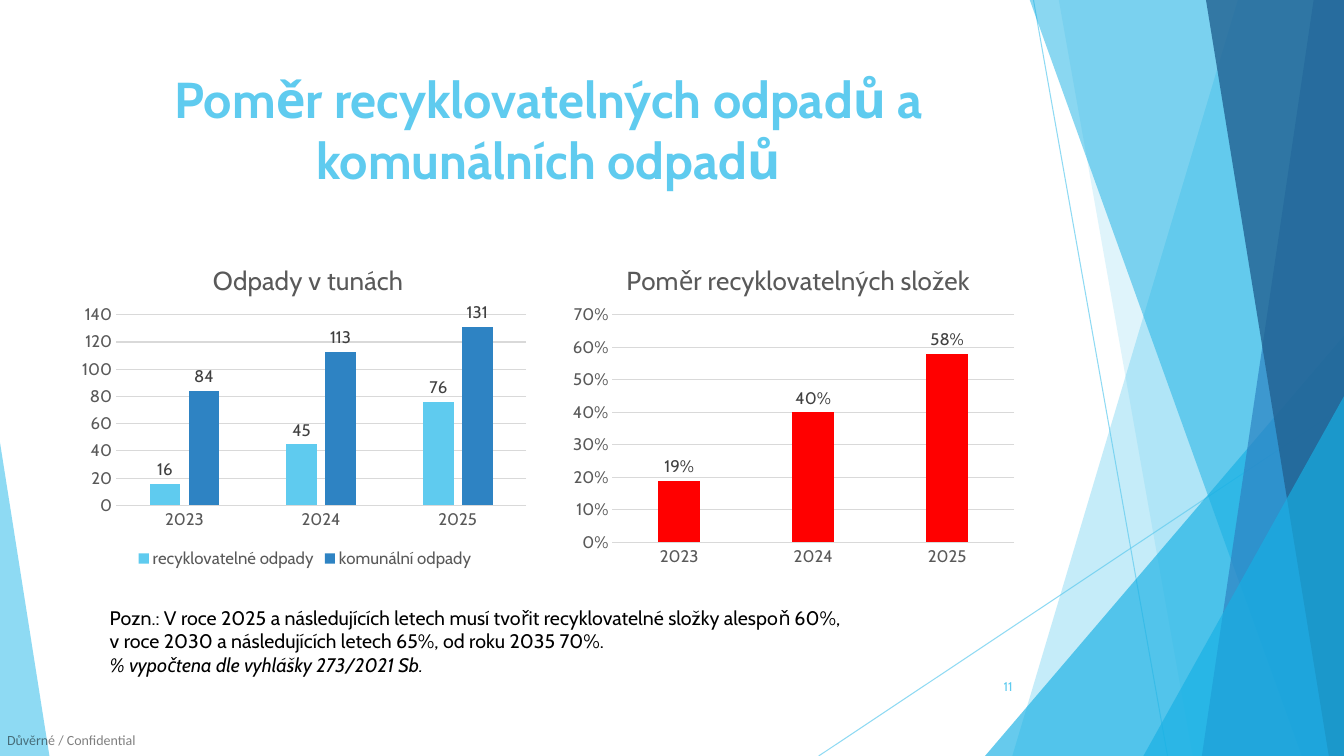
from collections import namedtuple
from dataclasses import dataclass

from lxml import etree
from pptx import Presentation
from pptx import util as u
from pptx.chart.data import CategoryChartData
from pptx.dml.color import RGBColor
from pptx.enum import chart as charts, shapes, text
from pptx.oxml.ns import qn

PX = 9144  # 100 px to the inch
Box = namedtuple("Box", "left top width height")


@dataclass(frozen=True)
class Theme:
    sky: str = "5FCBEF"
    cyan: str = "17B0E4"
    blue: str = "2E83C3"
    navy: str = "226292"
    red: str = "FF0000"
    black: str = "000000"
    axis_text: str = "595959"
    label_text: str = "404040"
    grid: str = "D9D9D9"
    font: str = "Cabin"
    footer_font: str = "Calibri"
    heading: float = 36
    chart_heading: float = 18.6
    note: float = 14
    chart_text: float = 12
    footer: float = 10
    number: float = 9
    hairline: float = 0.75


THEME = Theme()


def emu(*lengths):
    return [u.Emu(length * PX) for length in lengths]


def set_opacity(element, percent):
    for color in element.iter(qn("a:srgbClr")):
        etree.SubElement(color, qn("a:alpha"), val=str(percent * 1000))


def style_font(font, size, color, name=THEME.font, bold=False, italic=False):
    font.name, font.size = name, u.Pt(size)
    font.bold, font.italic = bold, italic
    font.color.rgb = RGBColor.from_string(color)


def style_line(line, color):
    line.color.rgb = RGBColor.from_string(color)
    line.width = u.Pt(THEME.hairline)


def paint(shape, color, opacity):
    shape.shadow.inherit = False
    shape.fill.solid()
    shape.fill.fore_color.rgb = RGBColor.from_string(color)
    shape.line.fill.background()
    set_opacity(shape._element.spPr, opacity)


def add_text(page, box, lines, size, color, name=THEME.font, bold=False,
             align=text.PP_ALIGN.LEFT, anchor=text.MSO_ANCHOR.TOP, wrap=True):
    frame = page.shapes.add_textbox(*emu(*box)).text_frame
    frame.word_wrap = wrap
    frame.vertical_anchor = anchor
    frame.text = "\n".join(lines)
    for para in frame.paragraphs:
        para.alignment = align
        for span in para.runs:
            style_font(span.font, size, color, name, bold)
    return frame


# Backdrop of overlapping translucent facets
def add_backdrop(page, box):
    right, bottom = box.left + box.width, box.top + box.height

    def ray(start, end):
        line = page.shapes.add_connector(
            shapes.MSO_CONNECTOR.STRAIGHT, *emu(*start, *end))
        style_line(line.line, THEME.sky)
        properties = line._element.spPr
        set_opacity(properties, 70)
        etree.SubElement(properties, qn("a:effectLst"))

    def band(top_x, bottom_x, color, opacity):
        top = box.top - 1
        builder = page.shapes.build_freeform(box.left + top_x, top, scale=PX)
        builder.add_line_segments(
            [(right, top), (right, bottom), (box.left + bottom_x, bottom)])
        paint(builder.convert_to_shape(), color, opacity)

    def corner(left, width, height, peak, color, opacity):
        shape = page.shapes.add_shape(
            shapes.MSO_SHAPE.ISOSCELES_TRIANGLE,
            *emu(left, bottom - height, width, height))
        shape.adjustments[0] = peak
        paint(shape, color, opacity)

    ray((box.left + 1025, box.top), (box.left + 1158, bottom))
    ray((right, box.top + 403), (box.left + 812, bottom))
    band(1228, 1004, THEME.sky, 36)
    band(1050, 1183, THEME.sky, 20)
    corner(right - 356, 356, 417, 1, THEME.cyan, 66)
    band(1021, 1291, THEME.cyan, 50)
    band(1303, 1192, THEME.blue, 70)
    band(1196, 1318, THEME.navy, 80)
    corner(right - 199, 199, 357, 1, THEME.cyan, 66)
    corner(box.left, 49, 311, 0, THEME.sky, 70)


def set_layout(parent, inner, **fractions):
    for old in parent.findall(qn("c:layout")):
        parent.remove(old)
    layout = etree.Element(qn("c:layout"))
    manual = etree.SubElement(layout, qn("c:manualLayout"))
    if inner:
        etree.SubElement(manual, qn("c:layoutTarget"), val="inner")
    for axis in "xy":
        etree.SubElement(manual, qn(f"c:{axis}Mode"), val="edge")
    for key, value in fractions.items():
        etree.SubElement(manual, qn(f"c:{key}"), val=str(value))
    parent.insert(0 if inner else 1, layout)


# Column chart with a heading and value labels
def add_columns(page, box, heading, heading_x, series, number_format,
                top_value, step, plot, legend=False):
    data = CategoryChartData(number_format=number_format)
    data.categories = ["2023", "2024", "2025"]
    for name, values, _ in series:
        data.add_series(name, values)
    chart = page.shapes.add_chart(
        charts.XL_CHART_TYPE.COLUMN_CLUSTERED, *emu(*box), data).chart
    style_font(chart.font, THEME.chart_text, THEME.axis_text)

    chart.has_title = True
    title = chart.chart_title
    title.text_frame.text = heading
    style_font(title.text_frame.paragraphs[0].runs[0].font,
               THEME.chart_heading, THEME.axis_text)
    title.include_in_layout = False
    set_layout(title._element, False, x=heading_x, y=0.06)
    set_layout(chart._chartSpace.chart.plotArea, True, **plot)

    chart.has_legend = legend
    if legend:
        chart.legend.position = charts.XL_LEGEND_POSITION.BOTTOM
        chart.legend.include_in_layout = False
        style_font(chart.legend.font, THEME.chart_text, THEME.axis_text)

    for axis in (chart.category_axis, chart.value_axis):
        axis.major_tick_mark = charts.XL_TICK_MARK.NONE
        axis.minor_tick_mark = charts.XL_TICK_MARK.NONE
        style_font(axis.tick_labels.font, THEME.chart_text, THEME.axis_text)
    style_line(chart.category_axis.format.line, THEME.grid)
    scale = chart.value_axis
    scale.minimum_scale, scale.maximum_scale = 0, top_value
    scale.major_unit = step
    scale.format.line.fill.background()
    scale.has_major_gridlines = True
    style_line(scale.major_gridlines.format.line, THEME.grid)
    scale.tick_labels.number_format = number_format
    scale.tick_labels.number_format_is_linked = False

    columns = chart.plots[0]
    columns.vary_by_categories = False
    columns.gap_width, columns.overlap = 219, -27
    for bars, (_, _, color) in zip(columns.series, series):
        bars.format.fill.solid()
        bars.format.fill.fore_color.rgb = RGBColor.from_string(color)
        labels = bars.data_labels
        labels.show_value = True
        labels.position = charts.XL_LABEL_POSITION.OUTSIDE_END
        labels.number_format = number_format
        labels.number_format_is_linked = False
        style_font(labels.font, THEME.chart_text, THEME.label_text)


# Confidentiality mark
def add_footer(page, box):
    frame = add_text(page, box, ["Důvěrné / Confidential"], THEME.footer,
                     THEME.black, THEME.footer_font, wrap=False)
    frame.margin_left = frame.margin_right = 0
    frame.margin_top = frame.margin_bottom = 0
    set_opacity(frame.paragraphs[0]._p, 50)


# Note on the legal targets
def add_note(page, box):
    frame = add_text(page, box, [
        "Pozn.: V roce 2025 a následujících letech musí tvořit recyklovatelné složky alespoň 60%,",
        "v roce 2030 a následujících letech 65%, od roku 2035 70%.",
        "% vypočtena dle vyhlášky 273/2021 Sb.",
    ], THEME.note, THEME.black, wrap=False)
    frame.paragraphs[-1].runs[0].font.italic = True


def main():
    deck = Presentation()
    deck.slide_width, deck.slide_height = emu(1333, 750)
    page = deck.slides.add_slide(deck.slide_layouts[6])
    add_backdrop(page, Box(0, 0, 1333, 750))
    add_footer(page, Box(7, 726, 131, 17))
    add_text(page, Box(74, 63, 940, 144),
             ["Poměr recyklovatelných odpadů a komunálních odpadů"],
             THEME.heading, THEME.sky, bold=True, align=text.PP_ALIGN.CENTER)
    add_columns(page, Box(74, 236, 457, 332), "Odpady v tunách", 0.29,
                [("recyklovatelné odpady", (16, 45, 76), THEME.sky),
                 ("komunální odpady", (84, 113, 131), THEME.blue)],
                "0", 140, 20, dict(x=0.09, y=0.23, w=0.89, h=0.57), legend=True)
    add_columns(page, Box(557, 236, 458, 332), "Poměr recyklovatelných složek", 0.13,
                [("Poměr", (0.19, 0.4, 0.58), THEME.red)],
                "0%", 0.7, 0.1, dict(x=0.11, y=0.23, w=0.87, h=0.68))
    add_text(page, Box(939, 661, 75, 40), ["11"], THEME.number, THEME.sky,
             align=text.PP_ALIGN.RIGHT, anchor=text.MSO_ANCHOR.MIDDLE)
    add_note(page, Box(99, 596, 797, 104))
    deck.save("out.pptx")


if __name__ == "__main__":
    main()
